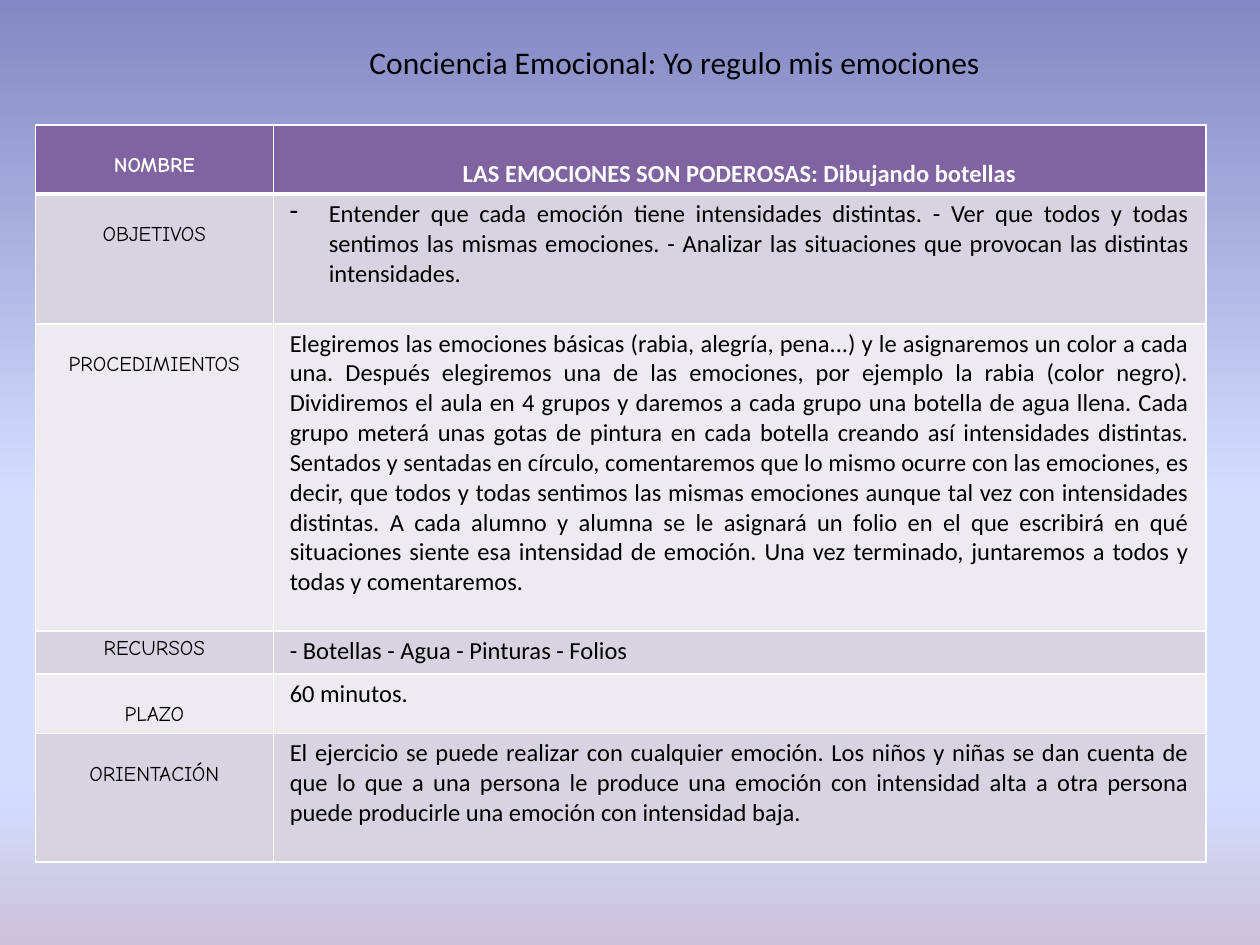
import dataclasses

import lxml.etree
import pptx
import pptx.dml.color
import pptx.enum.text
import pptx.oxml.ns
import pptx.util

Inches = pptx.util.Inches
Align = pptx.enum.text.PP_ALIGN
qn = pptx.oxml.ns.qn


@dataclasses.dataclass(frozen=True)
class Theme:
    sky: tuple = ((0, "8488C4"), (53, "D4DEFF"), (83, "D4DEFF"), (100, "CCC1DA"))
    header: str = "8064A2"
    bands: tuple = ("D8D3E0", "EDEAF0")
    ink: str = "000000"
    white: str = "FFFFFF"
    body_font: str = "Calibri"
    label_font: str = "Comic Neue"
    title_size: int = 18
    body_size: int = 14
    label_size: int = 12


COLUMNS = (1.89, 7.4)
LABEL_DROP = 0.19
HEADING_DROP = 0.23

ROWS = (
    (0.55, "NOMBRE", "LAS EMOCIONES SON PODEROSAS: Dibujando botellas"),
    (1.03, "OBJETIVOS",
     "Entender que cada emoción tiene intensidades distintas. - Ver que todos y todas "
     "sentimos las mismas emociones. - Analizar las situaciones que provocan las "
     "distintas intensidades."),
    (2.44, "PROCEDIMIENTOS",
     "Elegiremos las emociones básicas (rabia, alegría, pena...) y le asignaremos un color "
     "a cada una. Después elegiremos una de las emociones, por ejemplo la rabia (color "
     "negro). Dividiremos el aula en 4 grupos y daremos a cada grupo una botella de agua "
     "llena. Cada grupo meterá unas gotas de pintura en cada botella creando así "
     "intensidades distintas. Sentados y sentadas en círculo, comentaremos que lo mismo "
     "ocurre con las emociones, es decir, que todos y todas sentimos las mismas emociones "
     "aunque tal vez con intensidades distintas. A cada alumno y alumna se le asignará un "
     "folio en el que escribirá en qué situaciones siente esa intensidad de emoción. Una "
     "vez terminado, juntaremos a todos y todas y comentaremos."),
    (0.34, "RECURSOS", "- Botellas - Agua - Pinturas - Folios"),
    (0.46, "PLAZO", "60 minutos."),
    (1.02, "ORIENTACIÓN",
     "El ejercicio se puede realizar con cualquier emoción. Los niños y niñas se dan cuenta "
     "de que lo que a una persona le produce una emoción con intensidad alta a otra persona "
     "puede producirle una emoción con intensidad baja."),
)


class ActivitySheet:
    """Draws the parts of an activity sheet on one slide in one theme."""

    def __init__(self, page, theme):
        self.page = page
        self.theme = theme

    def background(self):
        fill = self.page.background.fill
        fill.gradient()
        fill.gradient_angle = 270
        stops = self.page.element.find(".//" + qn("a:gsLst"))
        for stop in list(stops):
            stops.remove(stop)
        for percent, color in self.theme.sky:
            stop = lxml.etree.SubElement(stops, qn("a:gs"), pos=str(percent * 1000))
            lxml.etree.SubElement(stop, qn("a:srgbClr"), val=color)

    def style(self, para, font, size, color, align, bold=False):
        para.alignment = align
        para.font.name = font
        para.font.size = pptx.util.Pt(size)
        para.font.bold = bold
        para.font.color.rgb = pptx.dml.color.RGBColor.from_string(color)

    def title(self, text, left, top, width, height):
        box = self.page.shapes.title
        box.left, box.top = Inches(left), Inches(top)
        box.width, box.height = Inches(width), Inches(height)
        frame = box.text_frame
        frame.text = text
        frame.word_wrap = True
        frame.auto_size = pptx.enum.text.MSO_AUTO_SIZE.SHAPE_TO_FIT_TEXT
        self.style(frame.paragraphs[0], self.theme.body_font, self.theme.title_size,
                   self.theme.ink, Align.CENTER)

    def borders(self, cell, top, bottom):
        properties = cell._tc.get_or_add_tcPr()
        widths = {"L": 1, "R": 1, "T": top, "B": bottom}
        for index, (side, width) in enumerate(widths.items()):
            line = lxml.etree.Element(qn("a:ln" + side), w=str(pptx.util.Pt(width)))
            fill = lxml.etree.SubElement(line, qn("a:solidFill"))
            lxml.etree.SubElement(fill, qn("a:srgbClr"), val=self.theme.white)
            properties.insert(index, line)

    def cell(self, cell, text, row, font, size, align, drop):
        heading = row == 0
        color = self.theme.header if heading else self.theme.bands[(row - 1) % 2]
        cell.fill.solid()
        cell.fill.fore_color.rgb = pptx.dml.color.RGBColor.from_string(color)
        cell.margin_left = cell.margin_right = Inches(0.13)
        cell.margin_top = Inches(0.04 + drop)
        cell.margin_bottom = Inches(0.04)
        self.borders(cell, 3 if row == 1 else 1, 3 if heading else 1)
        cell.text = text
        self.style(cell.text_frame.paragraphs[0], font, size,
                   self.theme.white if heading else self.theme.ink, align, heading)

    def dash(self, para, indent):
        properties = para._p.get_or_add_pPr()
        properties.set("marL", str(Inches(indent)))
        properties.set("indent", str(-Inches(indent)))
        bullet = lxml.etree.Element(qn("a:buChar"), char="-")
        properties.insert(0, bullet)

    def table(self, rows, left, top):
        height = sum(row[0] for row in rows)
        table = self.page.shapes.add_table(
            len(rows), len(COLUMNS), Inches(left), Inches(top),
            Inches(sum(COLUMNS)), Inches(height)).table
        table.horz_banding = False
        for column, width in zip(table.columns, COLUMNS):
            column.width = Inches(width)
        for index, (height, label, text) in enumerate(rows):
            table.rows[index].height = Inches(height)
            self.cell(table.cell(index, 0), label, index, self.theme.label_font,
                      self.theme.label_size, Align.CENTER,
                      0 if label == "RECURSOS" else LABEL_DROP)
            self.cell(table.cell(index, 1), text, index, self.theme.body_font,
                      self.theme.body_size, Align.JUSTIFY if index else Align.CENTER,
                      0 if index else HEADING_DROP)
        self.dash(table.cell(1, 1).text_frame.paragraphs[0], 0.31)


def main():
    deck = pptx.Presentation()
    deck.slide_width, deck.slide_height = Inches(10), Inches(7.5)
    sheet = ActivitySheet(deck.slides.add_slide(deck.slide_layouts[5]), Theme())
    sheet.background()
    sheet.table(ROWS, 0.28, 0.99)
    sheet.title("Conciencia Emocional: Yo regulo mis emociones", 2.56, 0.29, 5.59, 0.4)
    deck.save("out.pptx")


if __name__ == "__main__":
    main()
